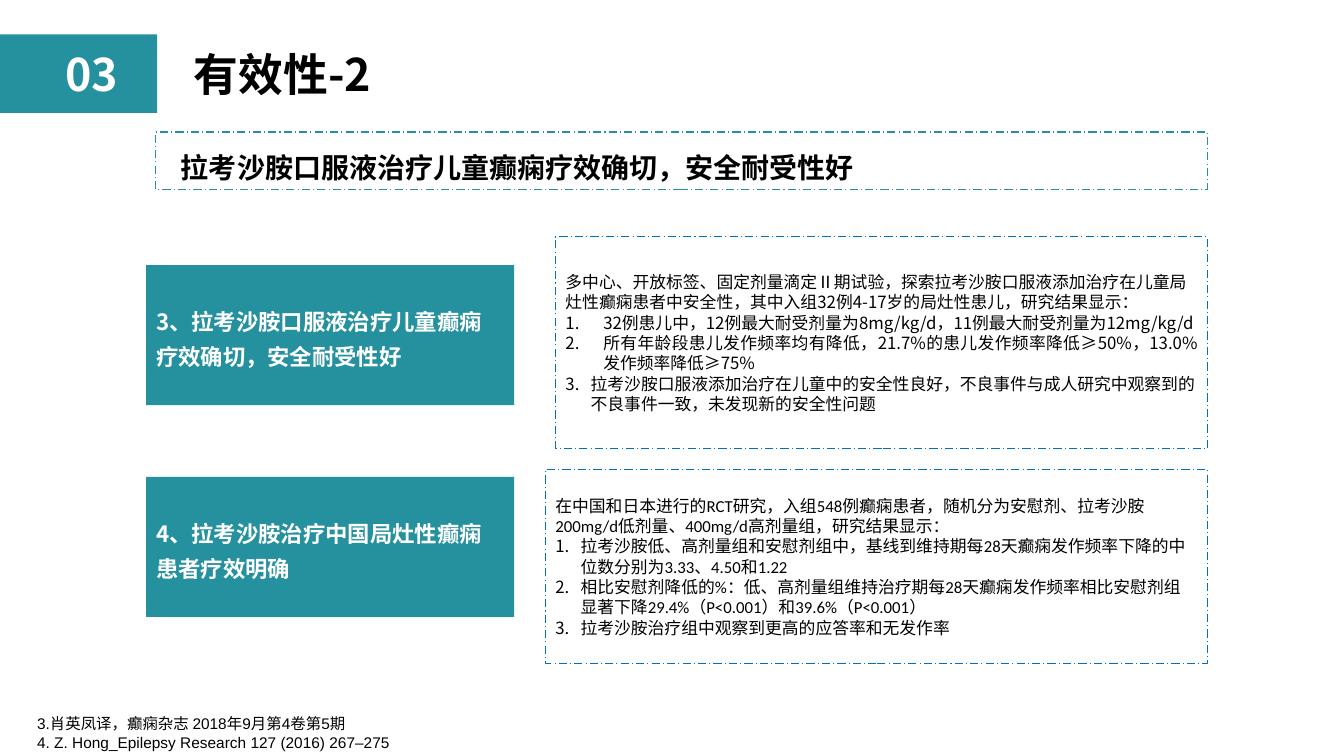
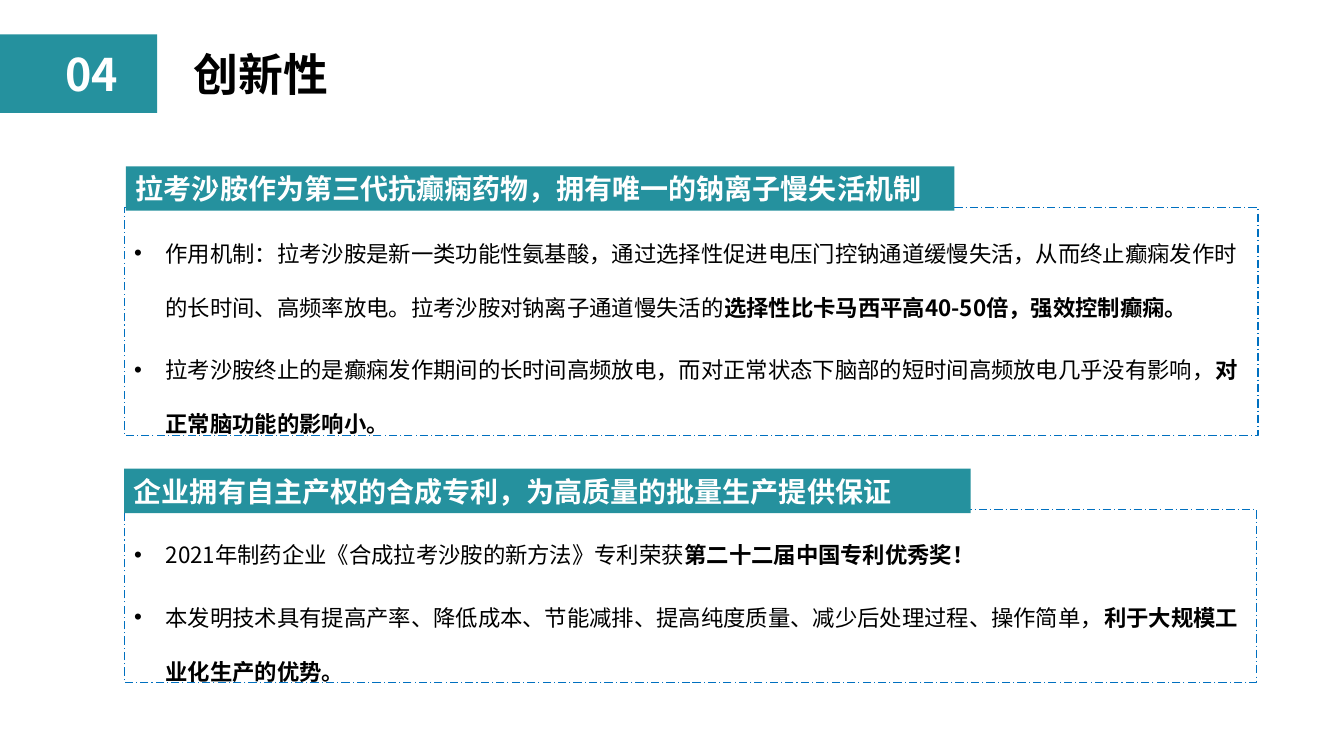
"""Builds two slides on the efficacy and innovation of lacosamide."""
from dataclasses import dataclass

import pptx
import pptx.dml.color
import pptx.enum.dml
import pptx.enum.shapes
import pptx.enum.text
import pptx.oxml.ns
import pptx.util
from lxml import etree

Pt = pptx.util.Pt
ALIGN = pptx.enum.text.PP_ALIGN
ANCHOR = pptx.enum.text.MSO_ANCHOR

COLOURS = {"teal": "25919E", "blue": "0070C0", "black": "000000", "white": "FFFFFF"}
CJK = "Noto Sans CJK SC"


@dataclass
class Item:
    """A paragraph with an optional bold ending and an optional marker."""
    plain: str
    strong: str = ""
    marker: str = ""
    hang: float = 0
    align: ALIGN = ALIGN.LEFT
    font: str = CJK


def rgb(name):
    """Return the named palette colour."""
    return pptx.dml.color.RGBColor.from_string(COLOURS[name])


def style_run(run, size, colour, bold, font=CJK):
    """Give a run its size, colour, weight and typefaces."""
    run.font.size = Pt(size)
    run.font.bold = bold
    run.font.color.rgb = rgb(colour)
    run.font.name = font
    east_asian = etree.SubElement(run.font._element, pptx.oxml.ns.qn("a:ea"))
    east_asian.set("typeface", CJK)


def set_frame(shape, anchor):
    """Wrap the text at a fixed shape size and return its frame."""
    frame = shape.text_frame
    frame.word_wrap = True
    frame.auto_size = pptx.enum.text.MSO_AUTO_SIZE.NONE
    frame.vertical_anchor = anchor
    return frame


def write(shape, text, size, colour="black", bold=True, leading=None,
          anchor=ANCHOR.MIDDLE, font=CJK):
    """Write left-aligned lines in one style."""
    frame = set_frame(shape, anchor)
    frame.text = text
    for paragraph in frame.paragraphs:
        paragraph.alignment = ALIGN.LEFT
        if leading:
            paragraph.line_spacing = Pt(leading)
        for run in paragraph.runs:
            style_run(run, size, colour, bold, font)
    return frame


def place(shape, box):
    """Move and size a shape from left, top, width and height."""
    shape.left, shape.top, shape.width, shape.height = map(Pt, box)


def outline(shape, colour):
    """Draw a thin dash-dot frame without fill."""
    shape.fill.background()
    shape.line.color.rgb = rgb(colour)
    shape.line.width = Pt(0.75)
    shape.line.dash_style = pptx.enum.dml.MSO_LINE.LONG_DASH_DOT


def add_rectangle(slide, box):
    """Add a rectangle without shadow."""
    rectangle = slide.shapes.add_shape(
        pptx.enum.shapes.MSO_SHAPE.RECTANGLE, *map(Pt, box))
    rectangle.shadow.inherit = False
    return rectangle


def add_panel(slide, box):
    """Add a solid teal rectangle."""
    panel = add_rectangle(slide, box)
    panel.fill.solid()
    panel.fill.fore_color.rgb = rgb("teal")
    panel.line.fill.background()
    return panel


def add_label(slide, box):
    """Add an empty text box."""
    return slide.shapes.add_textbox(*map(Pt, box))


def set_marker(paragraph, item):
    """Set the hanging indent and the bullet or number of a paragraph."""
    properties = paragraph._p.get_or_add_pPr()
    properties.set("marL", str(Pt(item.hang)))
    properties.set("indent", str(-Pt(item.hang)))

    def add(tag, **attributes):
        etree.SubElement(properties, pptx.oxml.ns.qn(tag), **attributes)

    if item.marker == "number":
        add("a:buFontTx")
        add("a:buAutoNum", type="arabicPeriod")
    elif item.marker:
        add("a:buChar", char=item.marker)
    else:
        add("a:buNone")


def fill_list(slide, index, box, items, size, leading, before=0, anchor=ANCHOR.MIDDLE):
    """Turn a body placeholder into a framed list."""
    body = slide.placeholders[index]
    place(body, box)
    outline(body, "blue")
    frame = set_frame(body, anchor)
    frame.text = "\n".join(item.plain for item in items)
    for paragraph, item in zip(frame.paragraphs, items):
        paragraph.alignment = item.align
        paragraph.line_spacing = Pt(leading)
        paragraph.space_before = Pt(before)
        set_marker(paragraph, item)
        style_run(paragraph.runs[0], size, "black", False, item.font)
        if item.strong:
            ending = paragraph.add_run()
            ending.text = item.strong
            style_run(ending, size, "black", True, item.font)


def add_section(deck, number, heading):
    """Add a slide with its numbered band and title."""
    slide = deck.slides.add_slide(deck.slide_layouts[3])
    add_panel(slide, (0, 24.5, 112.3, 56.2))
    write(add_label(slide, (39.6, 29.5, 55.4, 46)), number, 32, "white")
    place(slide.shapes.title, (131, 29.5, 237, 46))
    write(slide.shapes.title, heading, 32)
    return slide


def build_efficacy(deck):
    """Build the efficacy slide."""
    slide = add_section(deck, "03", "有效性-2")

    banner = add_rectangle(slide, (110.9, 94.3, 751.7, 41))
    outline(banner, "teal")
    frame = write(banner, "拉考沙胺口服液治疗儿童癫痫疗效确切，安全耐受性好", 20,
                  anchor=ANCHOR.TOP)
    frame.margin_left, frame.margin_top, frame.margin_bottom = Pt(18.4), Pt(13.5), 0

    claims = ("3、拉考沙胺口服液治疗儿童癫痫疗效确切，安全耐受性好",
              "4、拉考沙胺治疗中国局灶性癫痫患者疗效明确")
    for row, claim in enumerate(claims):
        card = add_panel(slide, (104.4, 189.4 + row * 151.2, 262.8, 100))
        write(card, claim, 16, "white", leading=25)

    paediatric_trial = [
        Item("多中心、开放标签、固定剂量滴定Ⅱ期试验，探索拉考沙胺口服液添加治疗在儿童局灶性癫痫患者中安全性，"
             "其中入组32例4-17岁的局灶性患儿，研究结果显示："),
        Item("32例患儿中，12例最大耐受剂量为8mg/kg/d，11例最大耐受剂量为12mg/kg/d",
             marker="number", hang=27),
        Item("所有年龄段患儿发作频率均有降低，21.7%的患儿发作频率降低≥50%，13.0%发作频率降低≥75%",
             marker="number", hang=27, align=ALIGN.JUSTIFY),
        Item("拉考沙胺口服液添加治疗在儿童中的安全性良好，不良事件与成人研究中观察到的不良事件一致，"
             "未发现新的安全性问题", marker="number", hang=18),
    ]
    adult_trial = [
        Item("在中国和日本进行的RCT研究，入组548例癫痫患者，随机分为安慰剂、拉考沙胺200mg/d低剂量、"
             "400mg/d高剂量组，研究结果显示：", font="Calibri"),
        Item("拉考沙胺低、高剂量组和安慰剂组中，基线到维持期每28天癫痫发作频率下降的中位数分别为3.33、4.50和1.22",
             marker="number", hang=18, font="Calibri"),
        Item("相比安慰剂降低的%：低、高剂量组维持治疗期每28天癫痫发作频率相比安慰剂组显著下降29.4%"
             "（P<0.001）和39.6%（P<0.001）", marker="number", hang=18, font="Calibri"),
        Item("拉考沙胺治疗组中观察到更高的应答率和无发作率",
             marker="number", hang=18, font="Open Sans"),
    ]
    fill_list(slide, 1, (396.7, 169.2, 465.9, 151.2), paediatric_trial, 12, 14.5)
    fill_list(slide, 2, (389.5, 335.5, 473.1, 138.2), adult_trial, 12, 14.5)

    references = ("3.肖英凤译，癫痫杂志 2018年9月第4卷第5期\n"
                  "4. Z. Hong_Epilepsy Research 127 (2016) 267–275")
    write(add_label(slide, (19.4, 506.2, 481, 33.8)), references, 11, bold=False,
          leading=13.6, anchor=ANCHOR.TOP, font="Arial")


def build_innovation(deck):
    """Build the innovation slide."""
    slide = add_section(deck, "04", "创新性")
    mechanism = [
        Item("作用机制：拉考沙胺是新一类功能性氨基酸，通过选择性促进电压门控钠通道缓慢失活，"
             "从而终止癫痫发作时的长时间、高频率放电。拉考沙胺对钠离子通道慢失活的",
             "选择性比卡马西平高40-50倍，强效控制癫痫。", "•", 22.5),
        Item("拉考沙胺终止的是癫痫发作期间的长时间高频放电，而对正常状态下脑部的短时间高频放电几乎没有影响，",
             "对正常脑功能的影响小。", "•", 22.5),
    ]
    patent = [
        Item("2021年制药企业《合成拉考沙胺的新方法》专利荣获",
             "第二十二届中国专利优秀奖！", "•", 22.5),
        Item("本发明技术具有提高产率、降低成本、节能减排、提高纯度质量、减少后处理过程、操作简单，",
             "利于大规模工业化生产的优势。", "•", 22.5),
    ]
    sections = (
        ("拉考沙胺作为第三代抗癫痫药物，拥有唯一的钠离子慢失活机制",
         (90, 118.8, 591.8, 31.7), (88.6, 148.3, 810, 162.7), mechanism),
        ("企业拥有自主产权的合成专利，为高质量的批量生产提供保证",
         (88.6, 334.8, 604.8, 31.7), (88.6, 363.6, 808.6, 123.8), patent),
    )
    for index, (heading, bar, box, items) in enumerate(sections, start=1):
        fill_list(slide, index, box, items, 16, 38.6, before=6, anchor=ANCHOR.TOP)
        write(add_panel(slide, bar), heading, 20, "white")


def main():
    """Build and save the presentation."""
    deck = pptx.Presentation()
    deck.slide_width, deck.slide_height = Pt(960), Pt(540)
    build_efficacy(deck)
    build_innovation(deck)
    deck.save("out.pptx")


if __name__ == "__main__":
    main()
